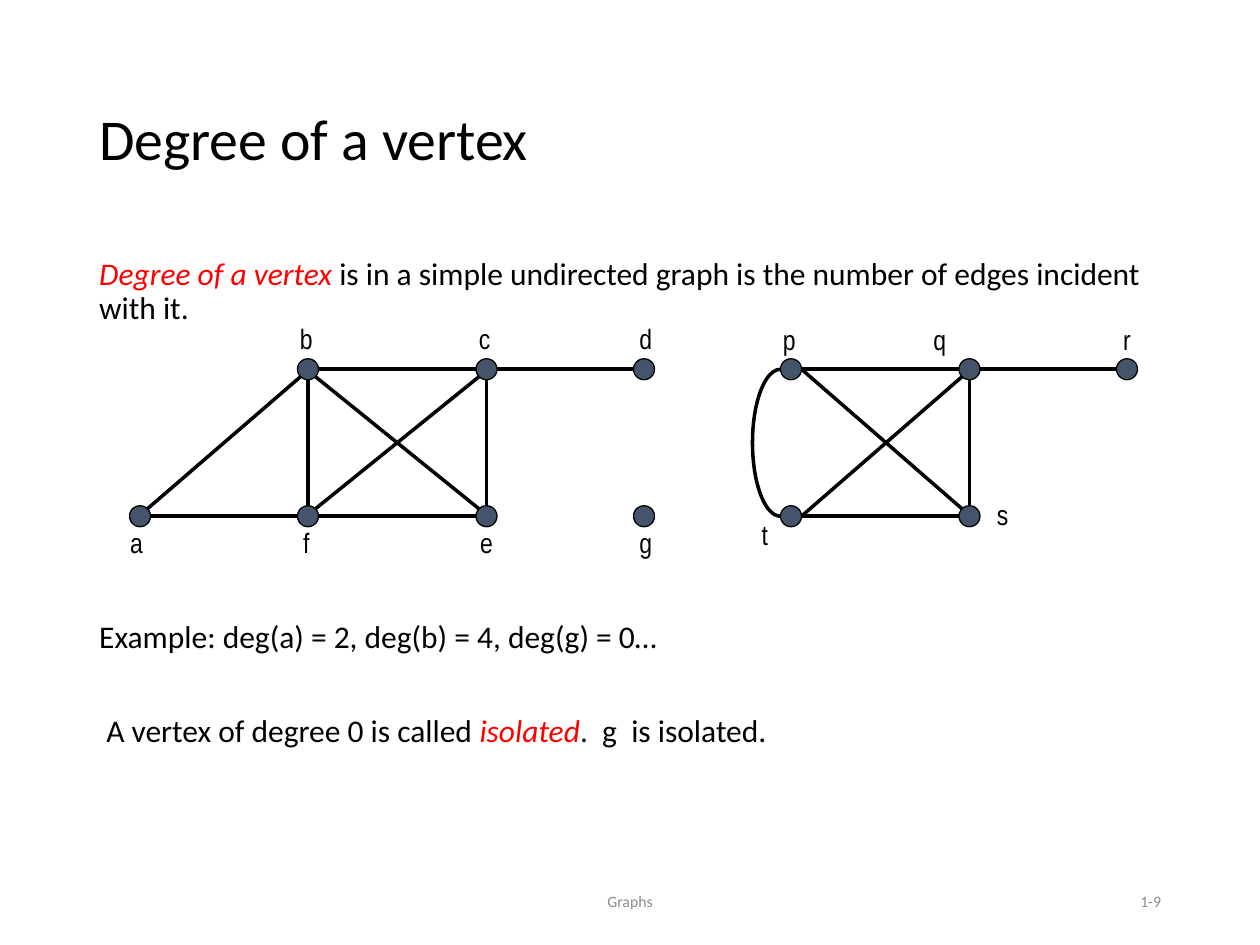
from math import hypot

from lxml.etree import SubElement
from pptx import Presentation
from pptx.dml.color import RGBColor
from pptx.enum.shapes import MSO_CONNECTOR, MSO_SHAPE
from pptx.enum.text import MSO_ANCHOR, MSO_AUTO_SIZE, PP_ALIGN
from pptx.oxml.ns import qn
from pptx.util import Pt

BLACK = RGBColor(0x00, 0x00, 0x00)
RED = RGBColor(0xFF, 0x00, 0x00)
GRAY = RGBColor(0x8C, 0x8C, 0x8C)
SLATE = RGBColor(0x44, 0x54, 0x6A)

RADIUS = 6
COLS = (80, 176, 278, 368)
TOP, BOTTOM = 211, 295
SHIFT = 276  # from the left graph to the right one
EAST = (1, 0)

# Vertex: centre x, centre y, label offset x, label offset y
LEFT_VERTICES = {
    "a": (COLS[0], BOTTOM, -2, 2),
    "f": (COLS[1], BOTTOM, -1, 2),
    "e": (COLS[2], BOTTOM, 0, 2),
    "g": (COLS[3], BOTTOM, 1, 2),
    "b": (COLS[1], TOP, -1, -31),
    "c": (COLS[2], TOP, -1, -31),
    "d": (COLS[3], TOP, 1, -31),
}
RIGHT_VERTICES = {
    "t": (COLS[1] + SHIFT, BOTTOM, -15, -3),
    "s": (COLS[2] + SHIFT, BOTTOM, 19, -14),
    "p": (COLS[1] + SHIFT, TOP, -1, -30),
    "q": (COLS[2] + SHIFT, TOP, -17, -30),
    "r": (COLS[3] + SHIFT, TOP, 0, -30),
}
# Edge: start, end, side of the end vertex when it is not the facing one
LEFT_EDGES = [("b", "a", None), ("f", "a", None), ("e", "f", None),
              ("b", "f", None), ("c", "b", None), ("c", "f", None),
              ("e", "b", None), ("c", "e", None), ("d", "c", None)]
RIGHT_EDGES = [("s", "t", None), ("q", "p", None), ("q", "t", EAST),
               ("s", "p", EAST), ("q", "s", None), ("r", "q", None)]

BODY = [  # space before, runs of (text, emphasised)
    (7.5, [("Degree of a vertex", True),
           (" is in a simple undirected graph is the number of edges "
            "incident with it.", False)]),
    (169, [("Example: deg(a) = 2, deg(b) = 4, deg(g) = 0…", False)]),
    (34.3, [(" A vertex of degree 0 is called ", False), ("isolated", True),
            (".  g  is isolated.", False)]),
]


def place(sp, left, top, width, height):
    sp.left, sp.top = Pt(left), Pt(top)
    sp.width, sp.height = Pt(width), Pt(height)


def set_font(font, name, size, color):
    font.name, font.size = name, Pt(size)
    font.color.rgb = color


def fill_title(sp, text):
    place(sp, 49.5, 28.75, 621, 104.4)
    tf = sp.text_frame
    tf.auto_size = MSO_AUTO_SIZE.NONE
    tf.vertical_anchor = MSO_ANCHOR.MIDDLE
    p = tf.paragraphs[0]
    p.text = text
    p.alignment = PP_ALIGN.LEFT
    p.line_spacing = 0.9
    set_font(p.font, "Calibri", 33, BLACK)


def fill_body(sp, paragraphs):
    place(sp, 49.5, 143.75, 621, 342.7)
    tf = sp.text_frame
    tf.auto_size = MSO_AUTO_SIZE.NONE
    for i, (space, runs) in enumerate(paragraphs):
        p = tf.paragraphs[0] if i == 0 else tf.add_paragraph()
        p.line_spacing = 0.9
        p.space_before = Pt(space)
        set_font(p.font, "Calibri", 18, BLACK)
        # No bullet and no indent
        pPr = p._p.get_or_add_pPr()
        pPr.set("marL", "0")
        pPr.set("indent", "0")
        pPr.insert_element_before(pPr.makeelement(qn("a:buNone"), {}),
                                  "a:tabLst", "a:defRPr", "a:extLst")
        for text, emphasised in runs:
            r = p.add_run()
            r.text = text
            if emphasised:
                r.font.italic = True
                r.font.color.rgb = RED


def add_text(shapes, box, text, align, font, wrap=True):
    sp = shapes.add_textbox(*map(Pt, box))
    tf = sp.text_frame
    tf.word_wrap = wrap
    p = tf.paragraphs[0]
    p.text = text
    p.alignment = align
    set_font(p.font, *font)
    return sp


def add_edge(shapes, start, end, end_side):
    (x1, y1), (x2, y2) = start[:2], end[:2]

    def rim(x, y, side):
        k = RADIUS / hypot(*side)
        return Pt(x + k * side[0]), Pt(y + k * side[1])

    dx = (x2 > x1) - (x2 < x1)
    dy = (y2 > y1) - (y2 < y1)
    cxn = shapes.add_connector(MSO_CONNECTOR.STRAIGHT, *rim(x1, y1, (dx, dy)),
                               *rim(x2, y2, end_side or (-dx, -dy)))
    cxn.line.color.rgb = BLACK
    cxn.line.width = Pt(2)
    SubElement(cxn._element.spPr, qn("a:effectLst"))


def add_vertex(shapes, name, x, y, label_dx, label_dy):
    sp = shapes.add_shape(MSO_SHAPE.OVAL, Pt(x - RADIUS), Pt(y - RADIUS),
                          Pt(2 * RADIUS), Pt(2 * RADIUS))
    sp.shadow.inherit = False
    sp.fill.solid()
    sp.fill.fore_color.rgb = SLATE
    sp.line.color.rgb = BLACK
    sp.line.width = Pt(0.75)
    label = add_text(shapes, (x + label_dx - 11, y + label_dy, 22, 26.6), name,
                     PP_ALIGN.CENTER, ("Arial Narrow", 16, BLACK), wrap=False)
    label.text_frame.auto_size = MSO_AUTO_SIZE.SHAPE_TO_FIT_TEXT


def add_left_arc(shapes, x, top, bottom, depth):
    sp = shapes.add_shape(MSO_SHAPE.ARC, Pt(x - depth), Pt(top),
                          Pt(2 * depth), Pt(bottom - top))
    # Angles in 60000ths of a degree, over 100000
    sp.adjustments[0], sp.adjustments[1] = 54, 162
    sp.shadow.inherit = False
    sp.fill.background()
    sp.line.color.rgb = BLACK
    sp.line.width = Pt(2)


def add_graph(s, vertices, edges):
    shapes = s.shapes.add_group_shape().shapes
    for start, end, end_side in edges:
        add_edge(shapes, vertices[start], vertices[end], end_side)
    for name, vertex in vertices.items():
        add_vertex(shapes, name, *vertex)
    return shapes


def main():
    prs = Presentation()
    prs.slide_width, prs.slide_height = Pt(720), Pt(540)
    s = prs.slides.add_slide(prs.slide_layouts[1])

    # Title and text
    fill_title(s.shapes.title, "Degree of a vertex")
    fill_body(s.placeholders[1], BODY)

    # Footer and page number
    for box, text, align in (
            ((238.5, 500.5, 243, 28.75), "Graphs", PP_ALIGN.CENTER),
            ((508.5, 500.5, 162, 28.75), "1-9", PP_ALIGN.RIGHT)):
        sp = add_text(s.shapes, box, text, align, ("Calibri", 9, GRAY))
        sp.text_frame.vertical_anchor = MSO_ANCHOR.MIDDLE

    # Graphs; the right one has a second, curved way from p to t
    add_graph(s, LEFT_VERTICES, LEFT_EDGES)
    right = add_graph(s, RIGHT_VERTICES, RIGHT_EDGES)
    add_left_arc(right, RIGHT_VERTICES["p"][0] - RADIUS, TOP, BOTTOM, 16)

    prs.save("out.pptx")


if __name__ == "__main__":
    main()
